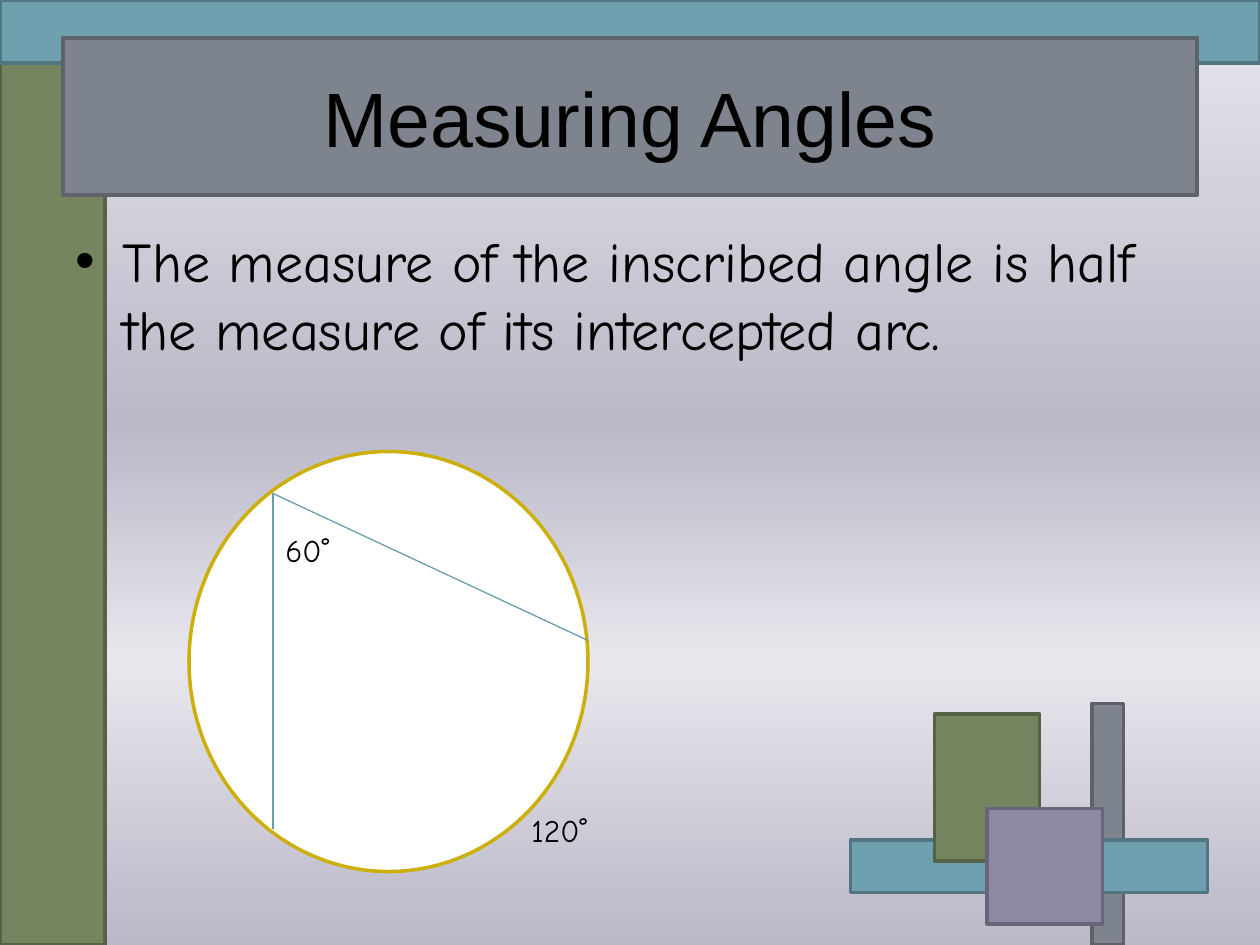
import pptx
import pptx.util
import pptx.dml.color
import pptx.enum.shapes
import pptx.enum.text
import pptx.oxml
import pptx.oxml.ns
from lxml import etree

Pt = pptx.util.Pt
SHAPE = pptx.enum.shapes.MSO_SHAPE

TITLE = "Measuring Angles"
BODY = "The measure of the inscribed angle is half the measure of its intercepted arc."
HEAD_FONT, BODY_FONT = "Arial", "Comic Neue"

BACKGROUND = [(0, "E8E7ED"), (45, "BBB8C8"), (70, "E8E7ED"), (100, "BBB8C8")]

# left, top, width, height, fill, line
CORNER_BLOCKS = [
    (624, 402, 18, 138, "7E848D", "5D6268"),
    (486, 480, 204, 30, "6EA0B0", "517682"),
    (534, 408, 60, 84, "748560", "566247"),
    (564, 462, 66, 66, "8D89A4", "686579"),
]
EDGE_BARS = [
    (0, 0, 60, 540, "748560", "566247"),
    (0, 0, 720, 36, "6EA0B0", "517682"),
]
TITLE_BOX = (36, 21.6, 648, 90)
BODY_BOX = (36, 126, 648, 356.4)

CIRCLE = (108, 258, 228, 240, "FFFFFF", "CCAF0A")
VERTEX = (156, 282)
ARC_ENDS = [(336, 366), (156, 474)]
LABELS = [("60˚", 156, 300, 66, 29), ("120˚", 296.6, 460, 78, 29)]


def color(hex_text):
    return pptx.dml.color.RGBColor.from_string(hex_text)


def paint(sp, fill, line, width=2):
    sp.fill.solid()
    sp.fill.fore_color.rgb = color(fill)
    sp.line.color.rgb = color(line)
    sp.line.width = Pt(width)


def add_block(shapes, kind, left, top, width, height, fill, line):
    sp = shapes.add_shape(kind, Pt(left), Pt(top), Pt(width), Pt(height))
    sp.shadow.inherit = False
    paint(sp, fill, line)


def write(sp, text, size, font, align=None, wrap=True):
    tf = sp.text_frame
    tf.word_wrap = wrap
    p = tf.paragraphs[0]
    p.alignment = align
    r = p.add_run()
    r.text = text
    r.font.size = Pt(size)
    r.font.name = font
    r.font.color.rgb = color("000000")
    return tf


def place(sp, left, top, width, height):
    """Move a placeholder into position, in front of everything so far."""
    sp.left, sp.top, sp.width, sp.height = Pt(left), Pt(top), Pt(width), Pt(height)
    tree = sp._element.getparent()
    tree.append(sp._element)


def set_background(s, stops):
    fill = s.background.fill
    fill.gradient()
    fill.gradient_angle = 270
    qn = pptx.oxml.ns.qn
    stop_list = next(s._element.iter(qn("a:gsLst")))
    for old in list(stop_list):
        stop_list.remove(old)
    for percent, hex_text in stops:
        stop = etree.SubElement(stop_list, qn("a:gs"), pos=str(percent * 1000))
        etree.SubElement(stop, qn("a:srgbClr"), val=hex_text)


def add_chord(s, start, end):
    line = s.shapes.add_connector(
        pptx.enum.shapes.MSO_CONNECTOR.STRAIGHT, *map(Pt, start + end))
    line.line.color.rgb = color("6A9DAE")
    line.line.width = Pt(0.75)
    etree.SubElement(line._element.spPr, pptx.oxml.ns.qn("a:effectLst"))


def main():
    prs = pptx.Presentation()
    prs.slide_width, prs.slide_height = Pt(720), Pt(540)
    s = prs.slides.add_slide(prs.slide_layouts[1])
    set_background(s, BACKGROUND)

    corner = s.shapes.add_group_shape()
    for shapes, blocks in ((corner.shapes, CORNER_BLOCKS), (s.shapes, EDGE_BARS)):
        for block in blocks:
            add_block(shapes, SHAPE.RECTANGLE, *block)

    title, body = s.shapes.title, s.placeholders[1]
    place(title, *TITLE_BOX)
    paint(title, "7E848D", "5E636A", 2.25)
    tf = write(title, TITLE, 44, HEAD_FONT, pptx.enum.text.PP_ALIGN.CENTER)
    tf.vertical_anchor = pptx.enum.text.MSO_ANCHOR.MIDDLE
    place(body, *BODY_BOX)
    tf = write(body, BODY, 32, BODY_FONT)
    tf.auto_size = pptx.enum.text.MSO_AUTO_SIZE.NONE

    add_block(s.shapes, SHAPE.OVAL, *CIRCLE)
    for end in ARC_ENDS:
        add_chord(s, VERTEX, end)
    for text, *box in LABELS:
        sp = s.shapes.add_textbox(*map(Pt, box))
        tf = write(sp, text, 18, BODY_FONT)
        tf.auto_size = pptx.enum.text.MSO_AUTO_SIZE.SHAPE_TO_FIT_TEXT

    prs.save("out.pptx")


if __name__ == "__main__":
    main()
